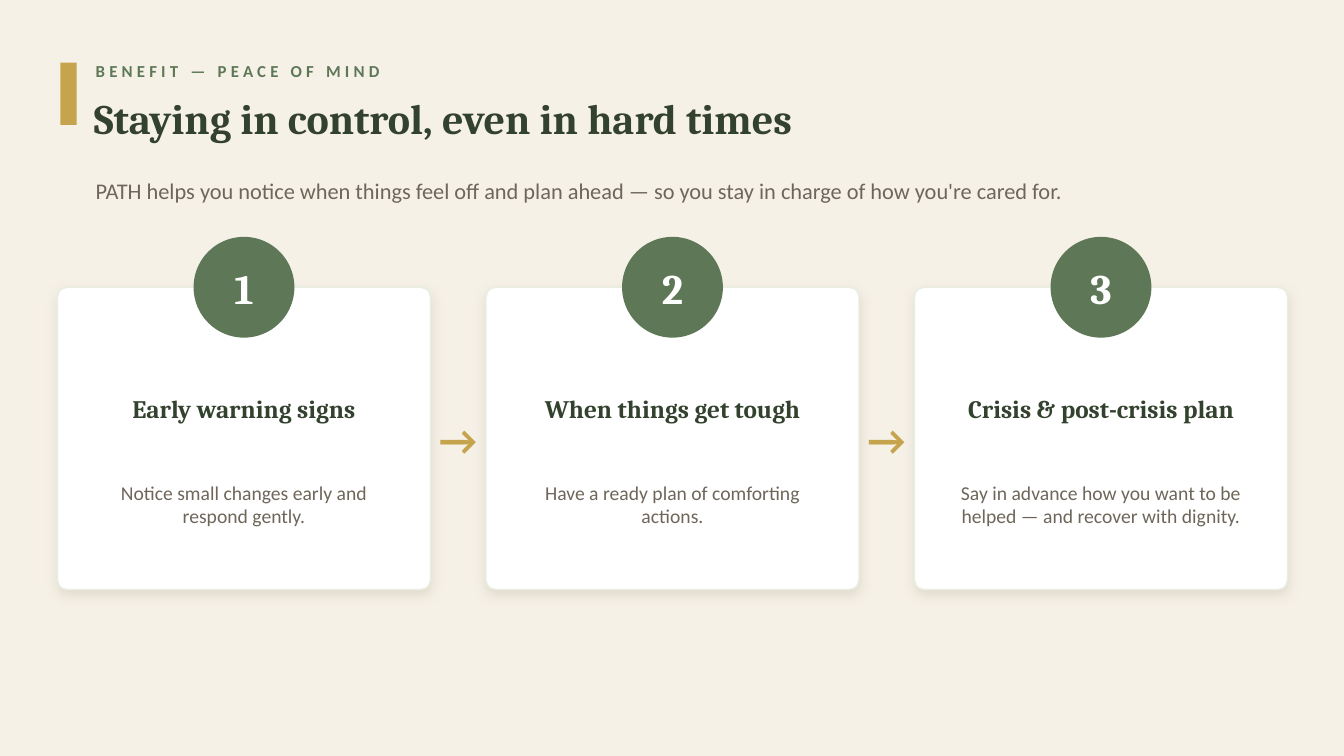
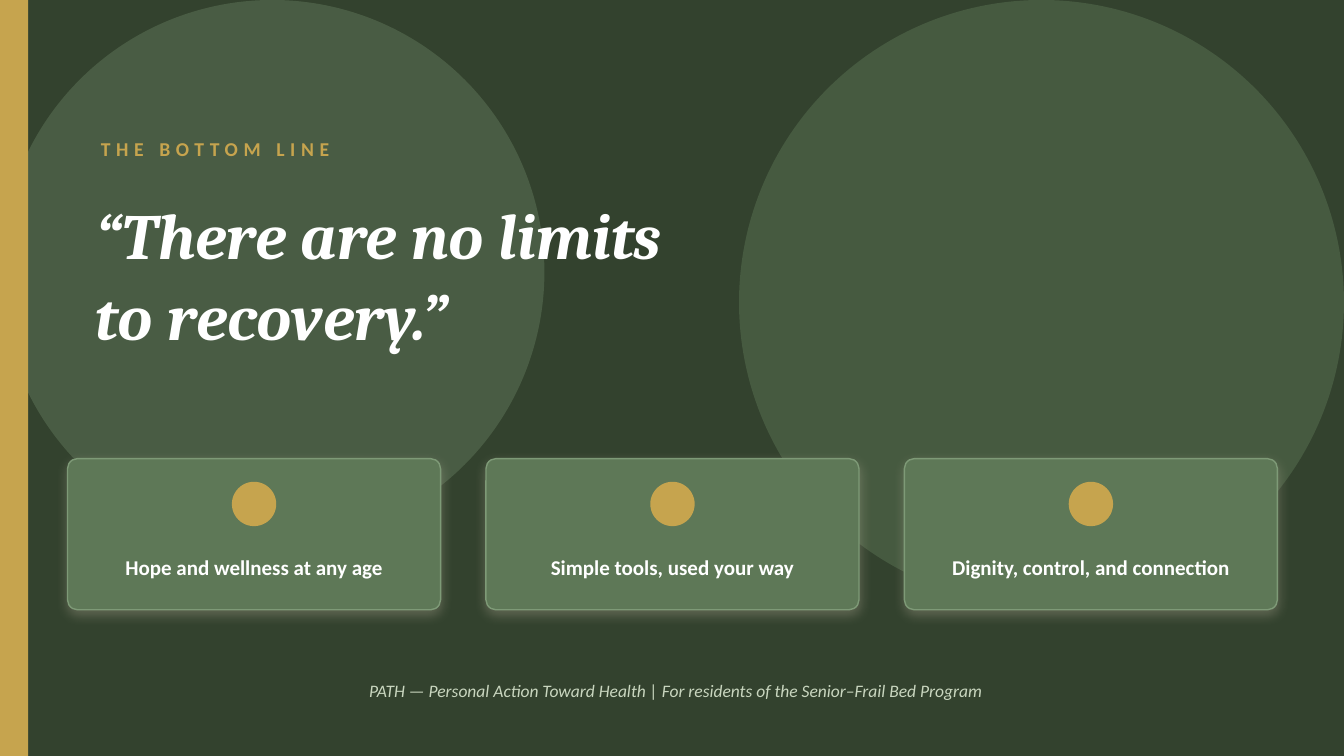
from lxml import etree
from pptx import Presentation
from pptx.dml.color import RGBColor
from pptx.enum.shapes import MSO_SHAPE
from pptx.enum.text import MSO_ANCHOR, MSO_AUTO_SIZE, PP_ALIGN
from pptx.oxml.ns import qn
from pptx.util import Inches, Pt

RECT = MSO_SHAPE.RECTANGLE
ROUND = MSO_SHAPE.ROUNDED_RECTANGLE
OVAL = MSO_SHAPE.OVAL
MIDDLE = MSO_ANCHOR.MIDDLE
FIXED = MSO_AUTO_SIZE.NONE
LEFT = PP_ALIGN.LEFT
CENTER = PP_ALIGN.CENTER

CREAM = RGBColor(0xF6, 0xF1, 0xE7)
FOREST = RGBColor(0x33, 0x42, 0x2E)
GREEN = RGBColor(0x5E, 0x78, 0x57)
SAGE = RGBColor(0x7E, 0x9A, 0x77)
MIST = RGBColor(0xE8, 0xEE, 0xE2)
PALE = RGBColor(0xC9, 0xD6, 0xBF)
GOLD = RGBColor(0xC6, 0xA4, 0x4E)
STONE = RGBColor(0x6E, 0x66, 0x5A)
SHADE = RGBColor(0xB9, 0xB0, 0x9B)
WHITE = RGBColor(0xFF, 0xFF, 0xFF)

HEAD = "Cambria"
BODY = "Calibri"
TITLE_ONLY = 5
WIDTH, HEIGHT = 13.33, 7.5
CARD = 3.7


def write(frame, text, size=14, color=STONE, font=BODY, bold=False,
          italic=False, align=LEFT, track=0, line=None):
    frame.text = text
    frame.word_wrap = True
    frame.auto_size = FIXED
    frame.vertical_anchor = MIDDLE
    frame.margin_left = frame.margin_right = 0
    frame.margin_top = frame.margin_bottom = 0
    for para in frame.paragraphs:
        para.alignment = align
        if line:
            para.line_spacing = line
        for run in para.runs:
            run.font.name = font
            run.font.size = Pt(size)
            run.font.bold = bold
            run.font.italic = italic
            run.font.color.rgb = color
            if track:
                run.font._element.set("spc", str(track * 100))


class Deck:
    def __init__(self):
        self.file = Presentation()
        self.file.slide_width = Inches(WIDTH)
        self.file.slide_height = Inches(HEIGHT)
        self.slide = None

    def page(self, color):
        layout = self.file.slide_layouts[TITLE_ONLY]
        self.slide = self.file.slides.add_slide(layout)
        fill = self.slide.background.fill
        fill.solid()
        fill.fore_color.rgb = color

    def title(self, box, text, **style):
        shape = self.slide.shapes.title
        tree = shape.element.getparent()
        tree.append(shape.element)
        shape.left, shape.top, shape.width, shape.height = map(Inches, box)
        write(shape.text_frame, text, font=HEAD, bold=True, **style)

    def text(self, box, text, **style):
        shape = self.slide.shapes.add_textbox(*map(Inches, box))
        write(shape.text_frame, text, **style)

    def shape(self, kind, box, color, alpha=None):
        shape = self.slide.shapes.add_shape(kind, *map(Inches, box))
        shape.shadow.inherit = False
        shape.fill.solid()
        shape.fill.fore_color.rgb = color
        shape.line.fill.background()
        if alpha:
            tint = shape.element.spPr.find(".//" + qn("a:srgbClr"))
            self.fade(tint, alpha)
        return shape

    def fade(self, tint, alpha):
        etree.SubElement(tint, qn("a:alpha"), val=str(alpha * 1000))

    def card(self, left, top, height, color, edge):
        card = self.shape(ROUND, (left, top, CARD, height), color)
        card.adjustments[0] = 0.1 / height
        card.line.color.rgb = edge
        card.line.width = Pt(1)
        glow = card.element.spPr.find(qn("a:effectLst"))
        drop = etree.SubElement(
            glow, qn("a:outerShdw"), blurRad=str(Pt(9)), dist=str(Pt(3)),
            dir="5400000", algn="ctr", rotWithShape="0")
        tint = etree.SubElement(drop, qn("a:srgbClr"), val=str(SHADE))
        self.fade(tint, 35)

    def dot(self, mid, top, size, color):
        return self.shape(OVAL, (mid - size / 2, top, size, size), color)


def plan(deck):
    deck.page(CREAM)
    deck.shape(RECT, (0.6, 0.62, 0.16, 0.62), GOLD)
    deck.text((0.95, 0.55, 11.5, 0.3), "BENEFIT — PEACE OF MIND",
              size=12, color=GREEN, bold=True, track=3)
    deck.title((0.93, 0.82, 11.6, 0.7),
               "Staying in control, even in hard times",
               size=30, color=FOREST)
    deck.text((0.95, 1.62, 11.4, 0.55),
              "PATH helps you notice when things feel off and plan ahead — "
              "so you stay in charge of how you're cared for.", size=16)
    steps = [
        ("Early warning signs",
         "Notice small changes early and respond gently."),
        ("When things get tough",
         "Have a ready plan of comforting actions."),
        ("Crisis & post-crisis plan",
         "Say in advance how you want to be helped — "
         "and recover with dignity."),
    ]
    pitch = 4.25
    for num, (name, note) in enumerate(steps):
        left = 0.57 + num * pitch
        deck.card(left, 2.85, 3, WHITE, MIST)
        badge = deck.dot(left + CARD / 2, 2.35, 1, GREEN)
        write(badge.text_frame, str(num + 1), size=30, color=WHITE,
              font=HEAD, bold=True, align=CENTER)
        deck.text((left + 0.3, 3.7, 3.1, 0.7), name, size=18,
                  color=FOREST, font=HEAD, bold=True, align=CENTER)
        deck.text((left + 0.35, 4.4, 3, 1.2), note, align=CENTER)
        if num < len(steps) - 1:
            deck.text((left + CARD + 0.04, 4, 0.47, 0.7), "→", size=30,
                      color=GOLD, bold=True, align=CENTER)


def close(deck):
    deck.page(FOREST)
    deck.shape(OVAL, (WIDTH - 6, 0, 6, 6), GREEN, alpha=45)
    deck.shape(OVAL, (0, 0, 5.4, 5.4), SAGE, alpha=30)
    deck.shape(RECT, (0, 0, 0.28, HEIGHT), GOLD)
    deck.text((1, 1.3, 8, 0.35), "THE BOTTOM LINE",
              color=GOLD, bold=True, track=4)
    deck.title((0.95, 1.75, 11.4, 1.9),
               "“There are no limits\nto recovery.”",
               size=46, color=WHITE, italic=True, line=1.05)
    gains = ["Hope and wellness at any age", "Simple tools, used your way",
             "Dignity, control, and connection"]
    pitch = 4.15
    for num, gain in enumerate(gains):
        left = 0.67 + num * pitch
        deck.card(left, 4.55, 1.5, GREEN, SAGE)
        deck.dot(left + CARD / 2, 4.78, 0.44, GOLD)
        deck.text((left + 0.25, 5.3, 3.2, 0.65), gain, size=15,
                  color=WHITE, bold=True, align=CENTER)
    deck.text((0.95, 6.65, 11.5, 0.4),
              "PATH — Personal Action Toward Health | "
              "For residents of the Senior–Frail Bed Program",
              size=12.5, color=PALE, italic=True, align=CENTER)


def main():
    deck = Deck()
    plan(deck)
    close(deck)
    deck.file.save("out.pptx")


if __name__ == "__main__":
    main()
